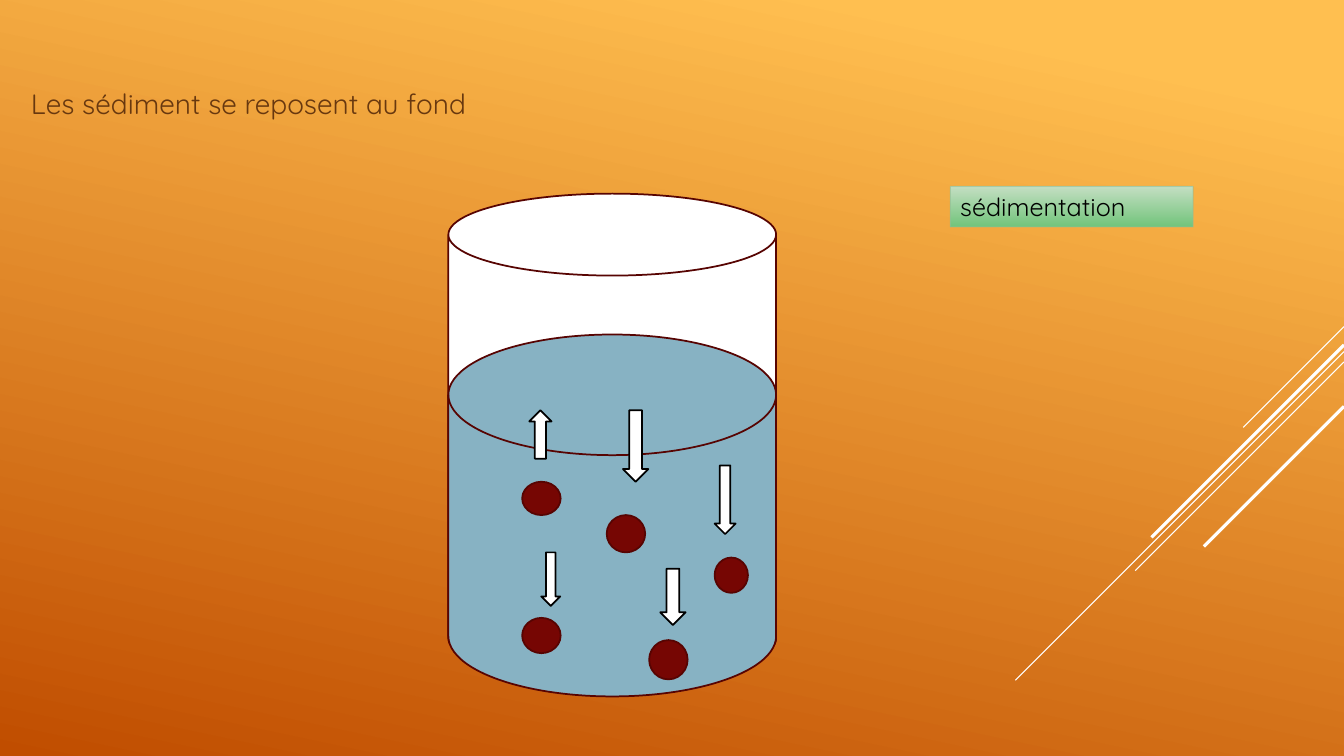
from dataclasses import dataclass

from lxml import etree
from pptx import Presentation
from pptx.dml.color import RGBColor
from pptx.enum import shapes, text
from pptx.oxml.ns import qn
from pptx.util import Cm, Pt

KIND = shapes.MSO_SHAPE
FONT = "Quicksand"
WIDTH, HEIGHT = 33.87, 19.05
COLORS = {
    "sun": "FFBF50", "rust": "C04D00", "white": "FFFFFF", "black": "000000",
    "brown": "68380F", "edge": "570402", "grain": "760603", "water": "87B2C3",
    "mint": "C2DEC1", "green": "72C47B", "border": "94BD94",
}


@dataclass
class Streak:
    top: float
    run: float
    width: float


@dataclass
class Part:
    kind: shapes.MSO_SHAPE
    left: float
    top: float
    width: float
    height: float
    fill: str = "white"
    line: str = "edge"


def rgb(name: str) -> RGBColor:
    return RGBColor.from_string(COLORS[name])


def blend(fill, stops: list, angle: float) -> None:
    fill.gradient()
    fill.gradient_angle = angle
    for stop, (place, name) in zip(fill.gradient_stops, stops):
        stop.position = place
        stop.color.rgb = rgb(name)


def draw_streak(slide, streak: Streak) -> None:
    """Draw a 45 degree line down from the right edge."""
    line = slide.shapes.add_connector(
        shapes.MSO_CONNECTOR.STRAIGHT, Cm(WIDTH), Cm(streak.top),
        Cm(WIDTH - streak.run), Cm(streak.top + streak.run))
    line.line.color.rgb = rgb("white")
    line.line.width = Pt(streak.width)
    etree.SubElement(line._element.spPr, qn("a:effectLst"))


def draw_part(slide, part: Part, weight: float = 1.25):
    shape = slide.shapes.add_shape(
        part.kind, Cm(part.left), Cm(part.top), Cm(part.width), Cm(part.height))
    shape.shadow.inherit = False
    shape.fill.solid()
    shape.fill.fore_color.rgb = rgb(part.fill)
    shape.line.color.rgb = rgb(part.line)
    shape.line.width = Pt(weight)
    return shape


def write(shape, words: str, size: float, color: str):
    frame = shape.text_frame
    frame.word_wrap = True
    frame.vertical_anchor = text.MSO_ANCHOR.MIDDLE
    para = frame.paragraphs[0]
    para.alignment = text.PP_ALIGN.LEFT
    run = para.add_run()
    run.text = words
    run.font.name = FONT
    run.font.size = Pt(size)
    run.font.color.rgb = rgb(color)
    return para


STREAKS = [
    Streak(8.23, 2.54, 0.75),
    Streak(8.86, 8.28, 0.75),
    Streak(9.12, 5.26, 0.75),
    Streak(8.69, 4.85, 2.25),
    Streak(10.24, 3.53, 2.25),
]
GLASS = [
    Part(KIND.CAN, 11.3, 4.88, 8.26, 12.24),
    Part(KIND.FLOWCHART_MAGNETIC_DISK, 11.3, 8.43, 8.26, 9.12, "water"),
]
GRAINS = [
    Part(KIND.FLOWCHART_CONNECTOR, *box, "grain") for box in (
        (13.16, 15.57, 0.97, 0.89),
        (16.36, 16.13, 0.97, 0.99),
        (13.16, 12.14, 0.97, 0.84),
        (18.01, 14.05, 0.84, 0.89),
        (15.29, 12.98, 0.97, 0.94),
    )
]
ARROWS = [
    Part(kind, *box, line="black") for kind, box in (
        (KIND.DOWN_ARROW, (15.7, 10.34, 0.64, 1.8)),
        (KIND.DOWN_ARROW, (18.01, 11.73, 0.53, 1.73)),
        (KIND.DOWN_ARROW, (13.64, 13.92, 0.48, 1.35)),
        (KIND.DOWN_ARROW, (16.64, 14.33, 0.64, 1.42)),
        (KIND.UP_ARROW, (13.34, 10.34, 0.56, 1.22)),
    )
]
LABEL = Part(KIND.RECTANGLE, 23.95, 4.7, 6.12, 1.02, "mint", "border")


def main() -> None:
    deck = Presentation()
    deck.slide_width, deck.slide_height = Cm(WIDTH), Cm(HEIGHT)
    slide = deck.slides.add_slide(deck.slide_layouts[6])

    # Backdrop
    blend(slide.background.fill, [(0.1, "sun"), (1, "rust")], 258)
    for streak in STREAKS:
        draw_streak(slide, streak)

    # Heading
    box = slide.shapes.add_textbox(Cm(0.53), Cm(0), Cm(23.72), Cm(5.23))
    para = write(box, "Les sédiment se reposent au fond", 20, "brown")
    para.space_before, para.space_after = Pt(4), Pt(6)

    # Glass with its grains and arrows
    for part in GLASS + GRAINS + ARROWS:
        draw_part(slide, part)

    # Label with a translucent border
    label = draw_part(slide, LABEL, 0.75)
    blend(label.fill, [(0, "mint"), (1, "green")], 270)
    tint = label.line._ln.find(".//" + qn("a:srgbClr"))
    etree.SubElement(tint, qn("a:alpha"), val="60000")
    write(label, "sédimentation", 18, "black")

    deck.save("out.pptx")


if __name__ == "__main__":
    main()
